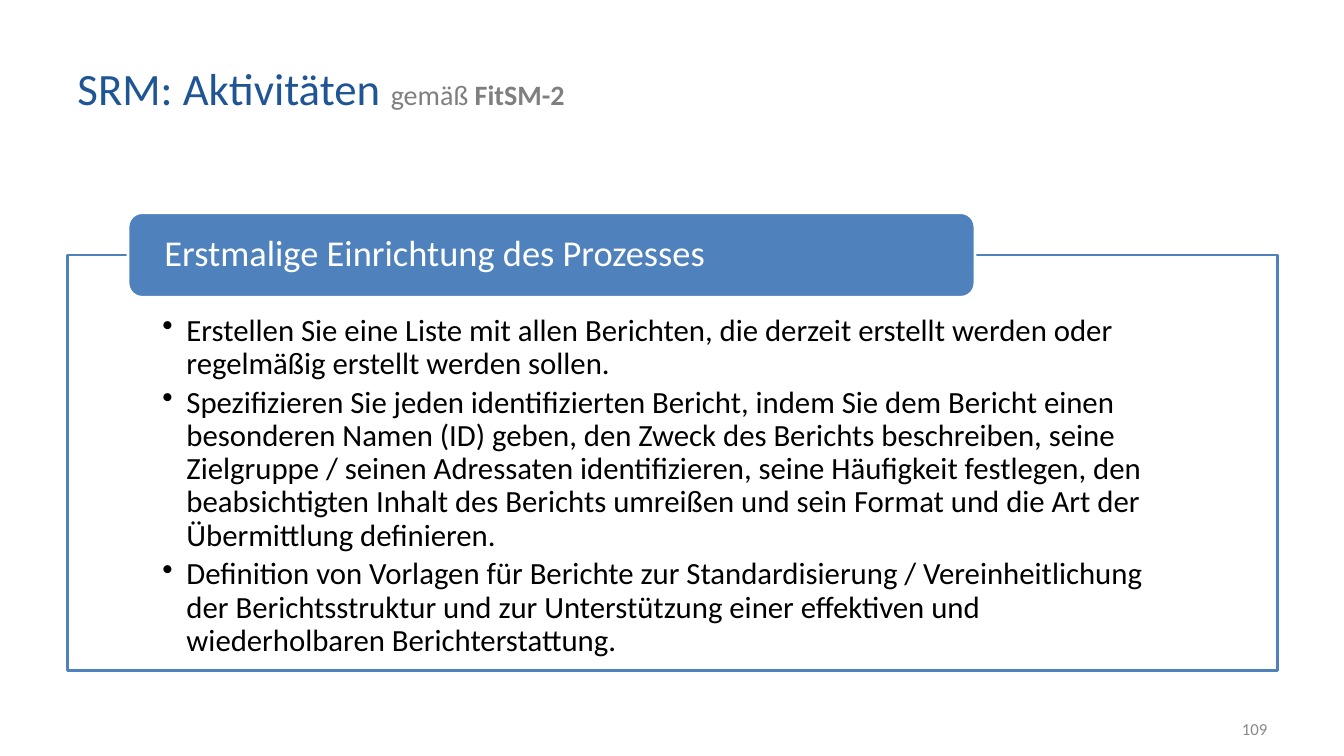
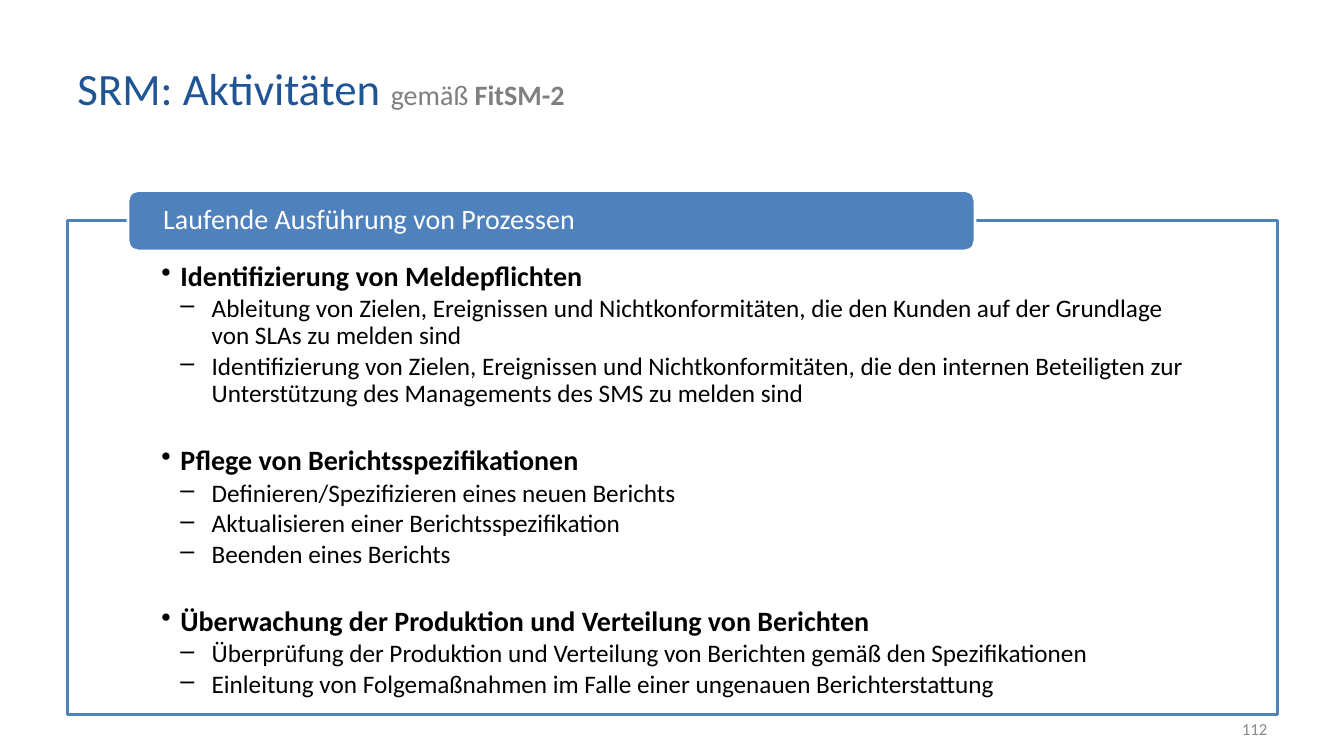
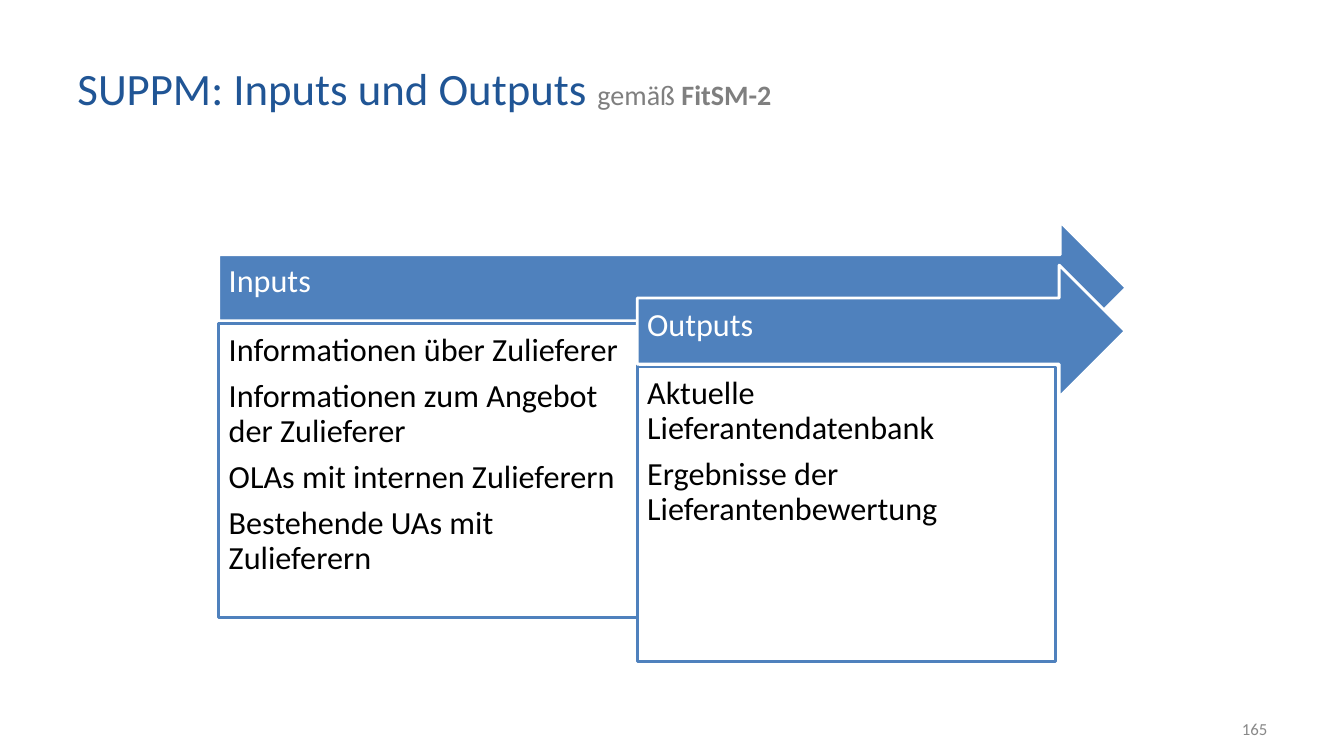
import pptx
import pptx.util
import pptx.dml.color
import pptx.enum.shapes
import pptx.enum.text
import pptx.oxml.ns
from lxml import etree

Inches = pptx.util.Inches
Pt = pptx.util.Pt
SHAPE = pptx.enum.shapes.MSO_SHAPE
ALIGN = pptx.enum.text.PP_ALIGN
ANCHOR = pptx.enum.text.MSO_ANCHOR


def rgb(code):
    return pptx.dml.color.RGBColor.from_string(code)


class Deck:
    FONT = "Calibri"
    BLUE, NAVY = "4F81BD", "205595"
    WHITE, BLACK = "FFFFFF", "000000"
    GREY, PALE = "7F7F7F", "888888"
    EDGE = 0.67
    WIDTH = 12

    def __init__(self):
        self.file = pptx.Presentation()
        self.file.slide_width = Inches(13.33)
        self.file.slide_height = Inches(7.5)
        self.slide = None

    def page(self, title, number):
        """Start a slide with its title and page number."""
        self.slide = self.file.slides.add_slide(self.file.slide_layouts[6])
        line = self.label(self.EDGE, 0.3, 9.9, 1.14)
        parts = [(title + " ", 32, self.NAVY, False),
                 ("gemäß ", 20, self.GREY, False),
                 ("FitSM-2", 20, self.GREY, True)]
        for text, size, color, bold in parts:
            run = line.add_run()
            run.text = text
            self.style(run.font, size, color, bold)
        line = self.label(9.56, 7.03, 3.11, 0.4)
        line.text = str(number)
        line.alignment = ALIGN.RIGHT
        self.style(line.runs[0].font, 12, self.PALE)

    def label(self, *area):
        """Add a text box and return its first paragraph."""
        frame = self.slide.shapes.add_textbox(*map(Inches, area)).text_frame
        frame.word_wrap = True
        frame.vertical_anchor = ANCHOR.MIDDLE
        return frame.paragraphs[0]

    def style(self, font, size, color, bold=False):
        font.name = self.FONT
        font.size = Pt(size)
        font.bold = bold
        font.color.rgb = rgb(color)

    def shape(self, kind, area, fill, line, pads, anchor):
        """Add a preset shape; pads are left, top, right, bottom."""
        shape = self.slide.shapes.add_shape(kind, *map(Inches, area))
        shape.shadow.inherit = False
        shape.fill.solid()
        shape.fill.fore_color.rgb = rgb(fill)
        shape.line.color.rgb = rgb(line)
        shape.line.width = Pt(2)
        frame = shape.text_frame
        frame.word_wrap = True
        frame.vertical_anchor = anchor
        (frame.margin_left, frame.margin_top,
         frame.margin_right, frame.margin_bottom) = map(Inches, pads)
        return frame

    def box(self, area, pads):
        return self.shape(SHAPE.RECTANGLE, area, self.WHITE, self.BLUE,
                          pads, ANCHOR.TOP)

    def band(self, kind, area, pads, text, size):
        """Add a blue heading shape with white text."""
        frame = self.shape(kind, area, self.BLUE, self.WHITE,
                           pads, ANCHOR.MIDDLE)
        self.list(frame, [text], size, self.WHITE)

    def list(self, frame, lines, size, color, gap=0):
        """Fill a frame with one paragraph a line."""
        frame.text = "\n".join(lines)
        for spot, line in enumerate(frame.paragraphs):
            line.alignment = ALIGN.LEFT
            line.line_spacing = 0.9
            line.space_before = Pt(gap if spot else 0)
            self.style(line.runs[0].font, size, color)

    def bullet(self, line, mark, left, hang):
        props = line._p.get_or_add_pPr()
        props.set("marL", str(Inches(left)))
        props.set("indent", str(-Inches(hang)))
        name = pptx.oxml.ns.qn
        tint = etree.SubElement(props, name("a:buClr"))
        etree.SubElement(tint, name("a:srgbClr"), val=self.BLACK)
        etree.SubElement(props, name("a:buChar"), char=mark)

    def panel(self, top, high, pads, head, tall, size):
        """Add a wide box with a heading across its top edge."""
        frame = self.box((self.EDGE, top, self.WIDTH, high), pads)
        self.band(SHAPE.ROUNDED_RECTANGLE, (1.27, top - tall / 2, 8.4, tall),
                  (0.32, 0, 0.32, 0), head, size)
        return frame

    def flow(self, left, top, wide, head, lines):
        """Add an arrow with a list box under its shaft."""
        self.band(SHAPE.RIGHT_ARROW, (left, top, wide, 1.31),
                  (0.1, 0.1, 0.28, 0.21), head, 23)
        frame = self.box((left, top + 1.01, 4.15, 2.92), (0.1,) * 4)
        self.list(frame, lines, 23, self.BLACK, 8.1)


def setup(deck):
    deck.page("SRM: Aktivitäten", 109)
    frame = deck.panel(2.53, 4.12, (0.93, 0.59, 0.93, 0.2),
                       "Erstmalige Einrichtung des Prozesses", 0.84, 26)
    steps = [
        "Erstellen Sie eine Liste mit allen Berichten, die derzeit erstellt "
        "werden oder regelmäßig erstellt werden sollen.",
        "Spezifizieren Sie jeden identifizierten Bericht, indem Sie dem "
        "Bericht einen besonderen Namen (ID) geben, den Zweck des Berichts "
        "beschreiben, seine Zielgruppe / seinen Adressaten identifizieren, "
        "seine Häufigkeit festlegen, den beabsichtigten Inhalt des Berichts "
        "umreißen und sein Format und die Art der Übermittlung definieren.",
        "Definition von Vorlagen für Berichte zur Standardisierung / "
        "Vereinheitlichung der Berichtsstruktur und zur Unterstützung einer "
        "effektiven und wiederholbaren Berichterstattung.",
    ]
    deck.list(frame, steps, 22, deck.BLACK, 3.9)
    for line in frame.paragraphs:
        deck.bullet(line, "•", 0.25, 0.24)


def ongoing(deck):
    deck.page("SRM: Aktivitäten", 112)
    frame = deck.panel(2.19, 4.9, (0.93, 0.41, 0.93, 0.14),
                       "Laufende Ausführung von Prozessen", 0.6, 20)
    topics = {
        "Identifizierung von Meldepflichten": [
            "Ableitung von Zielen, Ereignissen und Nichtkonformitäten, die "
            "den Kunden auf der Grundlage von SLAs zu melden sind",
            "Identifizierung von Zielen, Ereignissen und Nichtkonformitäten, "
            "die den internen Beteiligten zur Unterstützung des Managements "
            "des SMS zu melden sind"],
        "Pflege von Berichtsspezifikationen": [
            "Definieren/Spezifizieren eines neuen Berichts",
            "Aktualisieren einer Berichtsspezifikation",
            "Beenden eines Berichts"],
        "Überwachung der Produktion und Verteilung von Berichten": [
            "Überprüfung der Produktion und Verteilung von Berichten gemäß "
            "den Spezifikationen",
            "Einleitung von Folgemaßnahmen im Falle einer ungenauen "
            "Berichterstattung"],
    }
    lines = [text for head, subs in topics.items() for text in (head, *subs)]
    deck.list(frame, lines, 18, deck.BLACK, 2.5)
    for spot, line in enumerate(frame.paragraphs):
        if line.text in topics:
            deck.bullet(line, "•", 0.19, 0.19)
            line.space_before = Pt(27.4 if spot else 0)
            deck.style(line.runs[0].font, 20, deck.BLACK, True)
        else:
            line.level = 1
            deck.bullet(line, "–", 0.5, 0.31)


def inout(deck):
    deck.page("SUPPM: Inputs und Outputs", 165)
    deck.flow(2.17, 2.2, 9, "Inputs", [
        "Informationen über Zulieferer",
        "Informationen zum Angebot der Zulieferer",
        "OLAs mit internen Zulieferern",
        "Bestehende UAs mit Zulieferern"])
    deck.flow(6.32, 2.63, 4.84, "Outputs", [
        "Aktuelle Lieferantendatenbank",
        "Ergebnisse der Lieferantenbewertung"])


def main():
    deck = Deck()
    setup(deck)
    ongoing(deck)
    inout(deck)
    deck.file.save("out.pptx")


if __name__ == "__main__":
    main()
